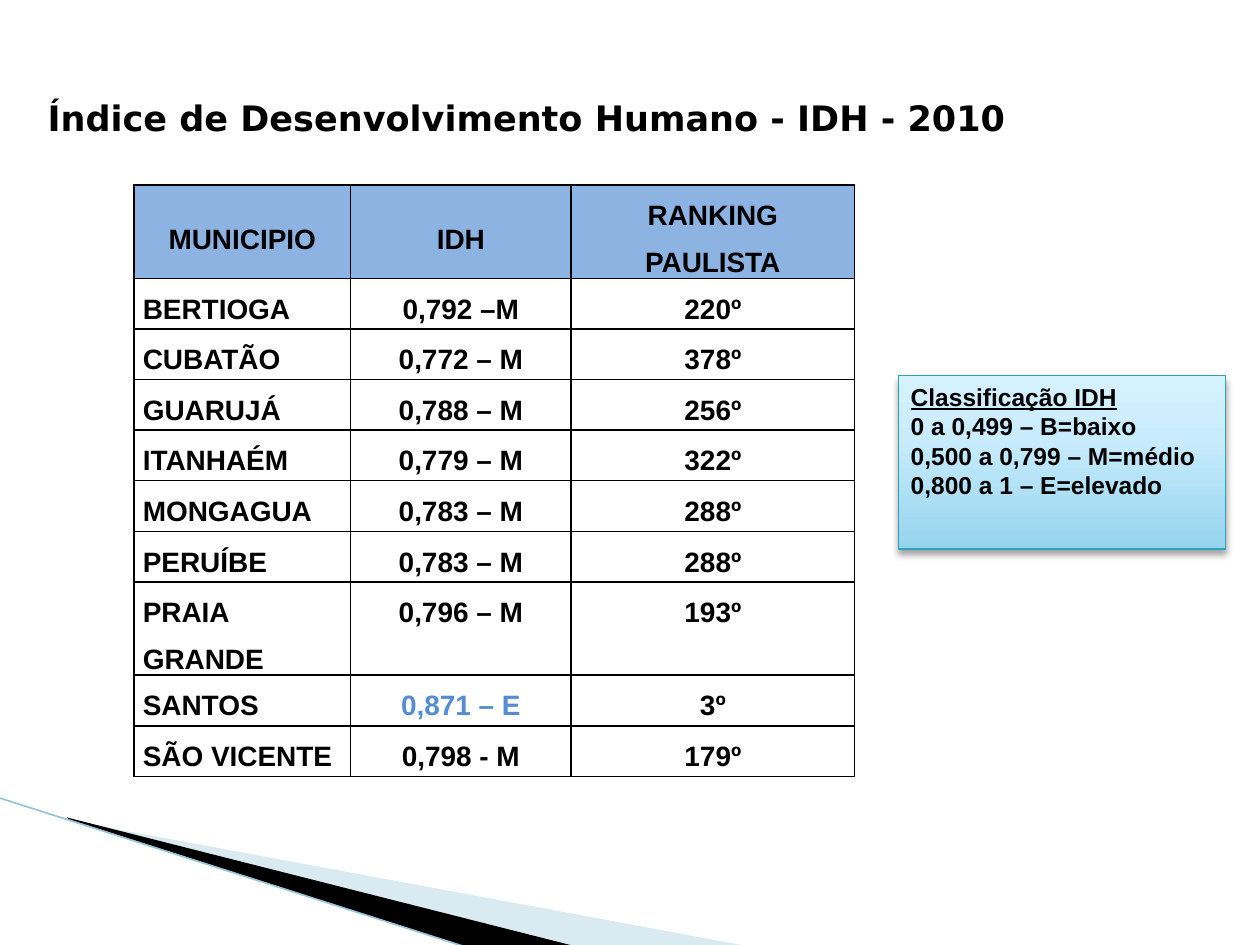
"""Builds the slide on the 2010 Human Development Index of coastal towns."""
from copy import deepcopy

from pptx import Presentation
from pptx.dml.color import RGBColor
from pptx.enum.shapes import MSO_CONNECTOR as CONN, MSO_SHAPE as SHAPE
from pptx.enum.text import MSO_ANCHOR as ANCHOR, PP_ALIGN as ALIGN
from pptx.oxml import parse_xml
from pptx.oxml.ns import nsdecls, qn
from pptx.util import Cm, Pt

HEADER = ("MUNICIPIO", "IDH", "RANKING PAULISTA")
TOWNS = [
    ("BERTIOGA", "0,792 –M", "220º"),
    ("CUBATÃO", "0,772 – M", "378º"),
    ("GUARUJÁ", "0,788 – M", "256º"),
    ("ITANHAÉM", "0,779 – M", "322º"),
    ("MONGAGUA", "0,783 – M", "288º"),
    ("PERUÍBE", "0,783 – M", "288º"),
    ("PRAIA GRANDE", "0,796 – M", "193º"),
    ("SANTOS", "0,871 – E", "3º"),
    ("SÃO VICENTE", "0,798 - M", "179º"),
]
CLASSES = ["Classificação IDH", "0 a 0,499 – B=baixo",
           "0,500 a 0,799 – M=médio", "0,800 a 1 – E=elevado"]


def rgb(value):
    """Return a colour from a hex string."""
    return RGBColor.from_string(value)


def apply(obj, formats):
    """Set attributes of an object from a dict."""
    for name, value in formats.items():
        setattr(obj, name, value)


def write(p, text, size, font="Arial", color="000000", align=ALIGN.LEFT, **formats):
    """Write one bold run into a paragraph."""
    p.alignment = align
    r = p.add_run()
    r.text = text
    apply(r.font, {"name": font, "size": Pt(size), "bold": True, **formats})
    r.font.color.rgb = rgb(color)


def add_polygon(s, points, color, alpha=100):
    """Draw a closed borderless polygon from points in centimetres."""
    corners = [(Cm(x), Cm(y)) for x, y in points]
    builder = s.shapes.build_freeform(*corners[0])
    builder.add_line_segments(corners[1:], close=True)
    sp = builder.convert_to_shape()
    sp.shadow.inherit = False
    sp.fill.solid()
    sp.fill.fore_color.rgb = rgb(color)
    sp.line.fill.background()
    if alpha < 100:
        clr = sp._element.spPr.find(".//" + qn("a:srgbClr"))
        clr.append(parse_xml(f'<a:alpha {nsdecls("a")} val="{alpha * 1000}"/>'))


def add_line(s, start, end, color, width):
    """Draw a straight line without a shadow."""
    line = s.shapes.add_connector(CONN.STRAIGHT, *map(Cm, start + end))
    line.line.color.rgb = rgb(color)
    line.line.width = Pt(width)
    line._element.spPr.append(parse_xml(f'<a:effectLst {nsdecls("a")}/>'))


def add_title(s, text):
    """Add the slide heading."""
    tf = s.shapes.add_textbox(Cm(0.71), Cm(1.8), Cm(20.27), Cm(1.12)).text_frame
    apply(tf, {"word_wrap": False, "vertical_anchor": ANCHOR.MIDDLE})
    write(tf.paragraphs[0], text, 20, "DejaVu Sans")


def add_borders(cell, color, width):
    """Outline all four sides of a table cell."""
    tcPr = cell._tc.get_or_add_tcPr()
    for side in "LRTB":
        tcPr.append(parse_xml(
            f'<a:ln{side} {nsdecls("a")} w="{Pt(width)}"><a:solidFill>'
            f'<a:srgbClr val="{color}"/></a:solidFill></a:ln{side}>'))


def fill_cell(cell, text, is_header, align, color):
    """Format one table cell and write its text."""
    apply(cell, {"margin_left": Cm(0.18), "margin_right": Cm(0.18),
                 "margin_top": 0, "margin_bottom": 0,
                 "vertical_anchor": ANCHOR.MIDDLE if is_header else ANCHOR.TOP})
    add_borders(cell, "000000", 1)
    if is_header:
        cell.fill.solid()
        cell.fill.fore_color.rgb = rgb("8DB3E2")
    else:
        cell.fill.background()
    p = cell.text_frame.paragraphs[0]
    p.line_spacing = 1.5
    write(p, text, 16, color=color, align=align)


def add_index_table(s):
    """Add the table of towns, index values and state ranking."""
    rows, widths, height = [HEADER] + TOWNS, (4.37, 4.44, 5.72), 1.02
    table = s.shapes.add_table(len(rows), len(widths), Cm(2.7), Cm(3.73),
                               Cm(sum(widths)), Cm(height * len(rows))).table
    apply(table, {"first_row": False, "horz_banding": False})
    for col, width in zip(table.columns, widths):
        col.width = Cm(width)
    for i, row in enumerate(rows):
        table.rows[i].height = Cm(height)
        for j, text in enumerate(row):
            align = ALIGN.LEFT if i and not j else ALIGN.CENTER
            color = "548DD4" if text.endswith("E") and j == 1 else "000000"
            fill_cell(table.cell(i, j), text, i == 0, align, color)


def set_gradient(sp, stops, angle):
    """Fill a shape with a linear gradient of (position, colour) stops."""
    sp.fill.gradient()
    sp.fill.gradient_angle = angle
    gs_list = sp._element.spPr.find(".//" + qn("a:gsLst"))
    while len(gs_list) < len(stops):
        gs_list.append(deepcopy(gs_list[0]))
    for stop, (position, color) in zip(sp.fill.gradient_stops, stops):
        stop.position = position
        stop.color.rgb = rgb(color)


def add_shadow(sp, color, alpha, blur, distance):
    """Give a shape a soft shadow straight below it."""
    sp.shadow.inherit = False
    sp._element.spPr.find(qn("a:effectLst")).append(parse_xml(
        f'<a:outerShdw {nsdecls("a")} blurRad="{Pt(blur)}" dist="{Pt(distance)}" '
        f'dir="5400000" rotWithShape="0"><a:srgbClr val="{color}">'
        f'<a:alpha val="{alpha * 1000}"/></a:srgbClr></a:outerShdw>'))


def add_legend(s):
    """Add the box that explains the index classes."""
    sp = s.shapes.add_shape(SHAPE.RECTANGLE, Cm(18.11), Cm(7.57), Cm(6.6), Cm(3.5))
    set_gradient(sp, [(0, "96D4EE"), (0.65, "C9ECFC"), (1, "D7F2FF")], 90)
    sp.line.color.rgb = rgb("2DA2BF")
    sp.line.width = Pt(0.75)
    add_shadow(sp, "000000", 35, 4, 3)
    tf = sp.text_frame
    apply(tf, {"word_wrap": True, "vertical_anchor": ANCHOR.TOP})
    for i, text in enumerate(CLASSES):
        p = tf.add_paragraph() if i else tf.paragraphs[0]
        write(p, text, 14, underline=i == 0)


def main():
    """Build and save the slide."""
    prs = Presentation()
    apply(prs, {"slide_width": Cm(25.4), "slide_height": Cm(19.05)})
    s = prs.slides.add_slide(prs.slide_layouts[6])
    add_polygon(s, [(1.4, 16.54), (15.11, 19.08), (11.58, 19.08), (1.4, 16.51)],
                "A0CBDC", 40)
    add_polygon(s, [(1.35, 16.48), (11.61, 19.08), (9.45, 19.1), (1.37, 16.51)],
                "000000")
    add_line(s, (-0.03, 16.08), (9.42, 19.1), "97C5D8", 0.95)
    add_index_table(s)
    add_title(s, "Índice de Desenvolvimento Humano - IDH - 2010")
    add_legend(s)
    prs.save("out.pptx")


if __name__ == "__main__":
    main()
